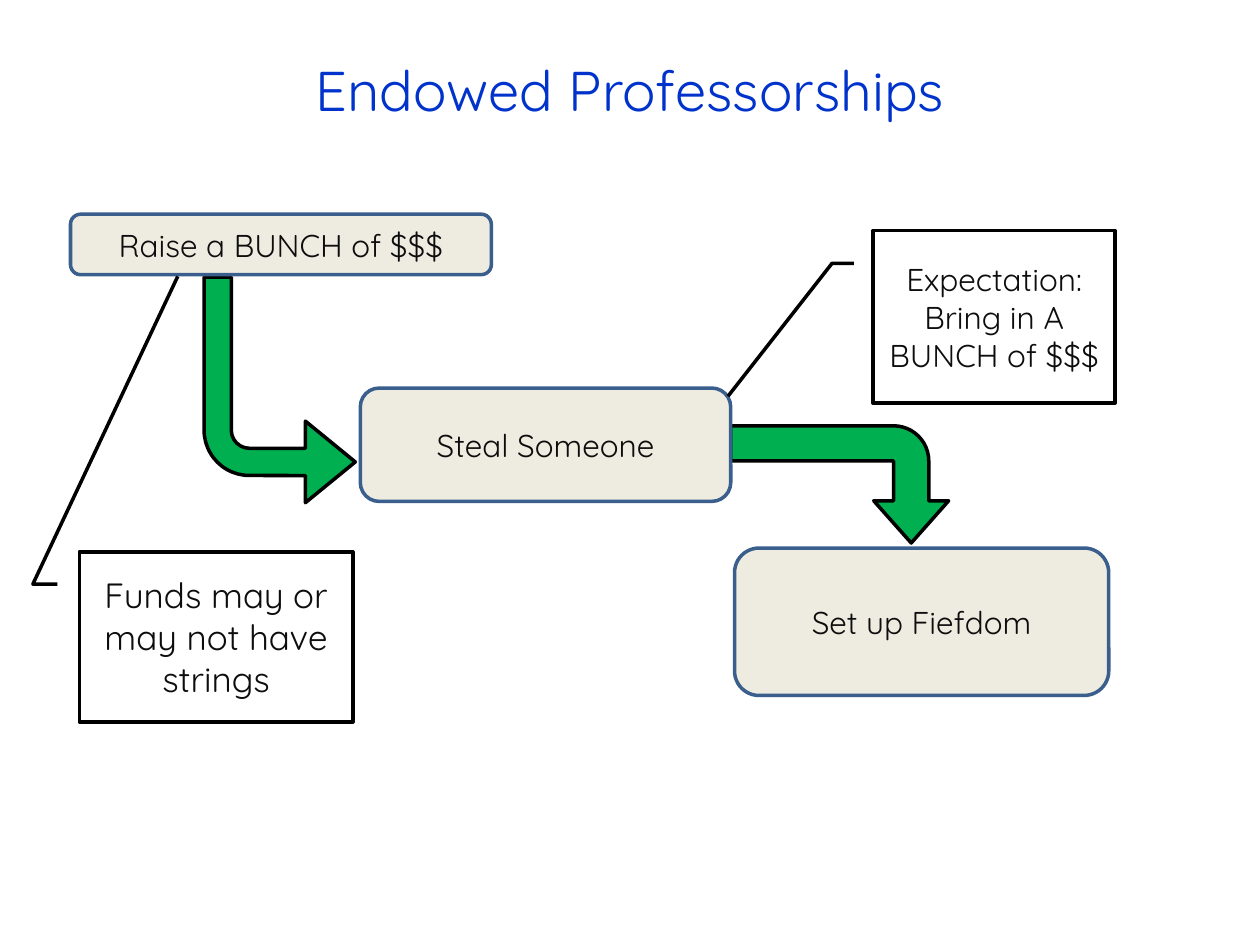
"""Build the Endowed Professorships flow slide."""
from pptx import Presentation
from pptx.dml.color import RGBColor
from pptx.enum.shapes import MSO_SHAPE
from pptx.enum.text import MSO_ANCHOR, PP_ALIGN
from pptx.oxml.ns import qn
from pptx.util import Inches, Pt

COLORS = {"title": "0033CC", "ink": "0D0D0D", "step": "EEECE1",
          "step_edge": "3A5F8C", "arrow": "00B050", "edge": "000000"}


def write(holder, text, size=18, color="ink", font="Quicksand"):
    frame = holder.text_frame
    frame.word_wrap = True
    frame.vertical_anchor = MSO_ANCHOR.MIDDLE
    paragraph = frame.paragraphs[0]
    paragraph.alignment = PP_ALIGN.CENTER
    run = paragraph.add_run()
    run.text = text
    run.font.name = font
    run.font.size = Pt(size)
    run.font.color.rgb = RGBColor.from_string(COLORS[color])


def draw(preset, place, fill=None, edge="edge", adjustments=()):
    shape = slide.shapes.add_shape(preset, *map(Inches, place))
    shape.shadow.inherit = False
    if fill:
        shape.fill.solid()
        shape.fill.fore_color.rgb = RGBColor.from_string(COLORS[fill])
    else:
        shape.fill.background()
    shape.line.color.rgb = RGBColor.from_string(COLORS[edge])
    shape.line.width = Pt(2)
    for index, value in enumerate(adjustments):
        shape.adjustments[index] = value
    return shape


prs = Presentation()
prs.slide_width, prs.slide_height = Inches(10), Inches(7.5)
slide = prs.slides.add_slide(prs.slide_layouts[5])

title = slide.shapes.title
title.left, title.top = Inches(0.5), Inches(0.3)
title.width, title.height = Inches(9), Inches(0.82)
write(title, "Endowed Professorships", size=32, color="title")

arrows = [
    ((1.62, 2.2, 1.2, 1.79), (0.18, 0.27, 0.33, 0.3), 0, ["flipV"]),
    ((6.2, 2.98, 0.93, 1.73), (0.3, 0.32, 0.36, 0.3), 270, ["flipH", "flipV"]),
]
for place, bend, rotation, flips in arrows:
    arrow = draw(MSO_SHAPE.BENT_ARROW, place, fill="arrow", adjustments=bend)
    arrow.rotation = rotation
    for flip in flips:
        arrow.element.spPr.find(qn("a:xfrm")).set(flip, "1")

steps = [
    ("Raise a BUNCH of $$$", (0.56, 1.7, 3.34, 0.48)),
    ("Set up Fiefdom", (5.83, 4.35, 2.97, 1.17)),
    ("Steal Someone", (2.86, 3.08, 2.94, 0.9)),
]
for text, place in steps:
    step = draw(MSO_SHAPE.ROUNDED_RECTANGLE, place, fill="step", edge="step_edge")
    write(step, text)

remarks = [
    ("Funds may or may not have strings", (0.63, 4.38, 2.17, 1.35), 20, (-1.62, 0.36)),
    ("Expectation: Bring in A BUNCH of $$$", (6.93, 1.83, 1.92, 1.37), 18, (0.96, -0.6)),
]
for text, place, size, target in remarks:
    remark = draw(MSO_SHAPE.LINE_CALLOUT_2, place,
                  adjustments=(0.19, -0.08, 0.19, -0.17, *target))
    write(remark, text, size=size)

prs.save("out.pptx")
